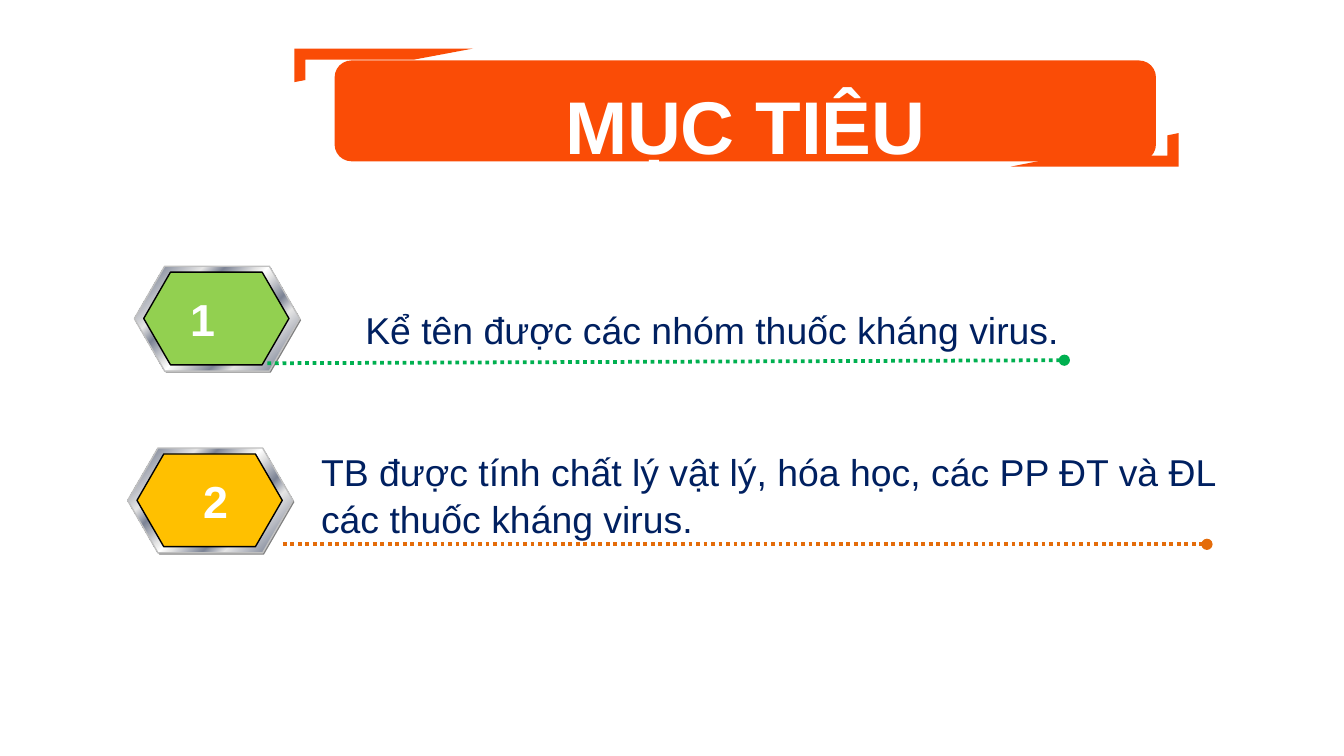
import pptx
import pptx.util
import pptx.dml.color
import pptx.enum.dml
import pptx.enum.shapes
import pptx.enum.text
import pptx.oxml
import pptx.oxml.ns
import lxml.etree

Pt = pptx.util.Pt
RGB = pptx.dml.color.RGBColor.from_string
SHAPE = pptx.enum.shapes.MSO_SHAPE
ALIGN = pptx.enum.text.PP_ALIGN
ANCHOR = pptx.enum.text.MSO_ANCHOR
qn = pptx.oxml.ns.qn

colors = {
    "banner": "FA4C06", "white": "FFFFFF", "black": "000000", "text": "002060",
    "shade": "808080", "rim": "C0C0C0", "light": "E6E6E6", "steel": "7D8496",
    "green": "92D050", "green_line": "00B050",
    "amber": "FFC000", "amber_line": "E46C0A",
}
metal = [(0, "light"), (8, "steel"), (26, "light"), (34, "steel"), (46, "light"),
         (50, "white"), (54, "light"), (66, "steel"), (74, "light"),
         (92, "steel"), (100, "light")]


def add_solid(shapes, kind, x, y, w, h, fill, line=None):
    sp = shapes.add_shape(kind, Pt(x), Pt(y), Pt(w), Pt(h))
    sp.shadow.inherit = False
    sp.fill.solid()
    sp.fill.fore_color.rgb = RGB(colors[fill])
    if line:
        sp.line.color.rgb = RGB(colors[line])
        sp.line.width = Pt(0.75)
    else:
        sp.line.fill.background()
    if kind == SHAPE.HEXAGON:
        sp.adjustments[0] = 0.289
    return sp


def format_text(p, size, color, bold=False):
    for r in p.runs:
        r.font.name = "Arial"
        r.font.size = Pt(size)
        r.font.bold = bold
        r.font.color.rgb = RGB(colors[color])


prs = pptx.Presentation()
prs.slide_width, prs.slide_height = Pt(720), Pt(405)
s = prs.slides.add_slide(prs.slide_layouts[6])

# Title banner
sp = add_solid(s.shapes, SHAPE.ROUNDED_RECTANGLE, 179.3, 32.4, 440, 54, "banner")
tf = sp.text_frame
tf.text = "MỤC TIÊU"
tf.margin_top, tf.margin_bottom = Pt(8), 0
tf.vertical_anchor = ANCHOR.TOP
tf.paragraphs[0].alignment = ALIGN.CENTER
format_text(tf.paragraphs[0], 40, "white", True)

# Numbered objectives
items = [
    {"number": "1", "x": 72, "y": 142.6, "margins": (0, 14.5), "fill": "green",
     "line": "green_line", "ends": (143.3, 194.6, 570.2, 193),
     "box": (188.6, 159.8, 389, 31.7), "indent": 0, "align": ALIGN.LEFT,
     "lines": ["Kể tên được các nhóm thuốc kháng virus."]},
    {"number": "2", "x": 68.4, "y": 240, "margins": (6.5, 0), "fill": "amber",
     "line": "amber_line", "ends": (151.5, 291.6, 646.6, 291.6),
     "box": (128.9, 236, 540.7, 55.4), "indent": 36, "align": ALIGN.JUSTIFY,
     "lines": ["TB được tính chất lý vật lý, hóa học, các PP ĐT và ĐL",
               "các thuốc kháng virus."]},
]
for item in items:
    shapes = s.shapes.add_group_shape().shapes
    x, y = item["x"], item["y"]

    # Metal badge: shade, gradient rim, coloured face
    add_solid(shapes, SHAPE.HEXAGON, x + 0.7, y + 0.9, 88.6, 56.2, "shade")
    rim = add_solid(shapes, SHAPE.HEXAGON, x, y, 88.6, 56.2, "light", "rim")
    rim.fill.gradient()
    rim.fill.gradient_angle = 315
    stops = rim._element.spPr.find(qn("a:gradFill")).find(qn("a:gsLst"))
    for old in list(stops):
        stops.remove(old)
    for pos, name in metal:
        gs = lxml.etree.SubElement(stops, qn("a:gs"), pos=str(pos * 1000))
        lxml.etree.SubElement(gs, qn("a:srgbClr"), val=colors[name])

    face = add_solid(shapes, SHAPE.HEXAGON, x + 5, y + 3.2, 77.8, 49.7,
                     item["fill"], "black")
    tf = face.text_frame
    tf.text = item["number"]
    tf.margin_left, tf.margin_right = (Pt(m) for m in item["margins"])
    tf.margin_top = tf.margin_bottom = 0
    tf.vertical_anchor = ANCHOR.MIDDLE
    tf.paragraphs[0].alignment = ALIGN.CENTER
    format_text(tf.paragraphs[0], 24, "white", True)

    # Dotted underline with a round end
    line = shapes.add_connector(pptx.enum.shapes.MSO_CONNECTOR.STRAIGHT,
                                *(Pt(v) for v in item["ends"]))
    line.line.color.rgb = RGB(colors[item["line"]])
    line.line.width = Pt(2)
    line.line.dash_style = pptx.enum.dml.MSO_LINE.ROUND_DOT
    ln = line.line._get_or_add_ln()
    lxml.etree.SubElement(ln, qn("a:tailEnd"), type="oval")
    lxml.etree.SubElement(line._element.spPr, qn("a:effectLst"))

    # Objective text
    tf = shapes.add_textbox(*(Pt(v) for v in item["box"])).text_frame
    tf.word_wrap = item["indent"] > 0
    tf.text = "\n".join(item["lines"])
    for p in tf.paragraphs:
        p.alignment = item["align"]
        p.line_spacing = 1.05
        p._p.get_or_add_pPr().set("marL", str(Pt(item["indent"])))
        format_text(p, 20, "text")

# Corner brackets around the banner
add_solid(s.shapes, SHAPE.HALF_FRAME, 157.7, 26, 95.8, 18, "banner")
sp = add_solid(s.shapes, SHAPE.HALF_FRAME, 541.4, 71.3, 90, 18, "banner")
sp.rotation = 180

prs.save("out.pptx")
